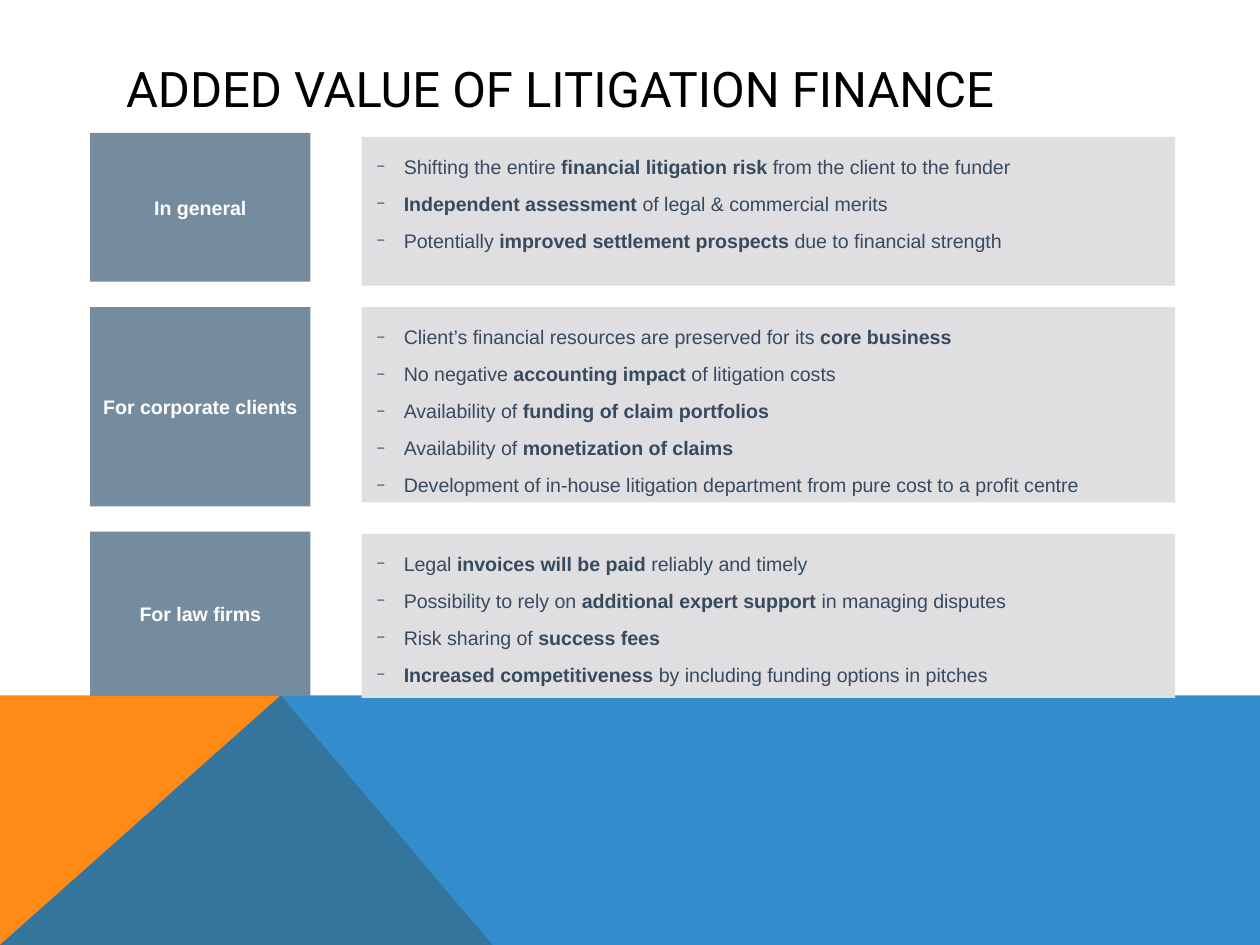
import lxml.etree
import pptx
import pptx.dml.color
import pptx.enum.shapes
import pptx.enum.text
import pptx.oxml.ns
import pptx.util

Cm = pptx.util.Cm
Pt = pptx.util.Pt
ALIGN = pptx.enum.text.PP_ALIGN
ANCHOR = pptx.enum.text.MSO_ANCHOR

WIDTH, HEIGHT = 25.4, 19.05
BAND_TOP, PEAK_X, WEDGE_RIGHT = 14.02, 5.66, 9.93
LABEL_LEFT, LABEL_WIDTH = 1.82, 4.44
LIST_LEFT, LIST_WIDTH = 7.29, 16.4

# label, label top, label height, list top, list height, items (bold between **)
SECTIONS = [
    ("In general", 2.68, 3.0, 2.76, 3.0, [
        "Shifting the entire **financial litigation risk **from the client to the funder",
        "**Independent assessment **of legal & commercial merits",
        "Potentially **improved settlement prospects **due to financial strength",
    ]),
    ("For corporate clients", 6.19, 4.02, 6.19, 3.94, [
        "Client’s financial resources are preserved for its **core business**",
        "No negative **accounting impact **of litigation costs",
        "Availability of **funding of claim portfolios**",
        "Availability of **monetization of claims**",
        "Development of in-house litigation department from pure cost to a profit centre",
    ]),
    ("For law firms", 10.72, 3.31, 10.76, 3.31, [
        "Legal **invoices will be paid **reliably and timely",
        "Possibility to rely on **additional expert support **in managing disputes",
        "Risk sharing of **success fees**",
        "**Increased competitiveness **by including funding options in pitches",
    ]),
]


def color(value):
    return pptx.dml.color.RGBColor.from_string(value)


def add_xml(parent, tag, **attributes):
    return lxml.etree.SubElement(parent, pptx.oxml.ns.qn(tag), **attributes)


class SlideBuilder:
    """Holds the style and the current slide."""

    title_font, body_font = "Roboto", "Arial"
    title_size, body_size = 28, 11.2
    label_fill, list_fill, list_text = "748C9E", "DFDEE1", "374A5E"

    def __init__(self, slide):
        self.slide = slide

    def fill(self, shape, value):
        shape.fill.solid()
        shape.fill.fore_color.rgb = color(value)
        shape.line.fill.background()

    def place(self, shape, left, top, width, height):
        shape.left, shape.top = Cm(left), Cm(top)
        shape.width, shape.height = Cm(width), Cm(height)

    def frame(self, shape, anchor, left, others):
        """Set anchor and insets, and return the text frame."""
        frame = shape.text_frame
        frame.word_wrap = True
        frame.auto_size = pptx.enum.text.MSO_AUTO_SIZE.NONE
        frame.vertical_anchor = anchor
        frame.margin_left = Cm(left)
        frame.margin_top = frame.margin_right = frame.margin_bottom = Cm(others)
        return frame

    def font(self, run, name, size, value, bold=False):
        run.font.name, run.font.size, run.font.bold = name, Pt(size), bold
        run.font.color.rgb = color(value)

    def background(self, points, value, opacity=100):
        """Draw a polygon behind everything else."""
        corners = [(Cm(x), Cm(y)) for x, y in points]
        builder = self.slide.shapes.build_freeform(*corners[0])
        builder.add_line_segments(corners[1:], close=True)
        shape = builder.convert_to_shape()
        shape.shadow.inherit = False
        self.fill(shape, value)
        if opacity < 100:
            rgb = shape.element.find(".//" + pptx.oxml.ns.qn("a:srgbClr"))
            add_xml(rgb, "a:alpha", val=str(opacity * 1000))
        return shape

    def title(self, text, *box):
        shape = self.slide.shapes.title
        self.place(shape, *box)
        frame = self.frame(shape, ANCHOR.MIDDLE, 0.25, 0.13)
        frame.text = text
        paragraph = frame.paragraphs[0]
        paragraph.alignment = ALIGN.LEFT
        self.font(paragraph.runs[0], self.title_font, self.title_size, "000000")

    def label(self, text, *box):
        shape = self.slide.shapes.add_shape(
            pptx.enum.shapes.MSO_SHAPE.RECTANGLE, *map(Cm, box))
        shape.shadow.inherit = False
        self.fill(shape, self.label_fill)
        frame = self.frame(shape, ANCHOR.MIDDLE, 0.1, 0.1)
        frame.text = text
        paragraph = frame.paragraphs[0]
        paragraph.alignment = ALIGN.CENTER
        self.font(paragraph.runs[0], self.body_font, self.body_size, "FFFFFF", True)

    def bullet(self, paragraph):
        properties = paragraph._p.get_or_add_pPr()
        properties.set("marL", str(Cm(0.55)))
        properties.set("indent", str(-Cm(0.55)))
        add_xml(properties, "a:buSzPct", val="75000")
        add_xml(properties, "a:buFont", typeface=self.body_font)
        add_xml(properties, "a:buChar", char="−")

    def bullet_list(self, placeholder, items, *box):
        self.place(placeholder, *box)
        self.fill(placeholder, self.list_fill)
        frame = self.frame(placeholder, ANCHOR.TOP, 0.3, 0.13)
        for index, item in enumerate(items):
            paragraph = frame.add_paragraph() if index else frame.paragraphs[0]
            paragraph.alignment = ALIGN.LEFT
            paragraph.line_spacing = 1.5
            paragraph.space_before, paragraph.space_after = Pt(0), Pt(1)
            self.bullet(paragraph)
            for position, text in enumerate(item.split("**")):
                if text:
                    run = paragraph.add_run()
                    run.text = text
                    self.font(run, self.body_font, self.body_size,
                              self.list_text, position % 2 == 1)


def main():
    presentation = pptx.Presentation()
    presentation.slide_width, presentation.slide_height = Cm(WIDTH), Cm(HEIGHT)
    comparison_layout = presentation.slide_layouts[4]
    slide = presentation.slides.add_slide(comparison_layout)
    builder = SlideBuilder(slide)

    peak = (PEAK_X, BAND_TOP)
    wedge = builder.background(
        [(0, HEIGHT), (0, BAND_TOP), peak, (WEDGE_RIGHT, HEIGHT)], "FF8A15")
    band = builder.background(
        [(0, HEIGHT), peak, (WIDTH, BAND_TOP), (WIDTH, HEIGHT)], "0070C0", 80)
    tree = slide.shapes.element
    for position, shape in enumerate((wedge, band), start=2):
        tree.insert(position, shape.element)

    builder.title("ADDED VALUE OF LITIGATION FINANCE", 2.29, 1.02, 20.88, 1.52)
    bodies = [shape for shape in slide.placeholders
              if shape.placeholder_format.idx in (1, 2, 3, 4)]
    for body, section in zip(bodies, SECTIONS):
        label, label_top, label_height, list_top, list_height, items = section
        builder.label(label, LABEL_LEFT, label_top, LABEL_WIDTH, label_height)
        builder.bullet_list(body, items, LIST_LEFT, list_top, LIST_WIDTH, list_height)
    for unused in bodies[len(SECTIONS):]:
        tree.remove(unused.element)

    presentation.save("out.pptx")


if __name__ == "__main__":
    main()
